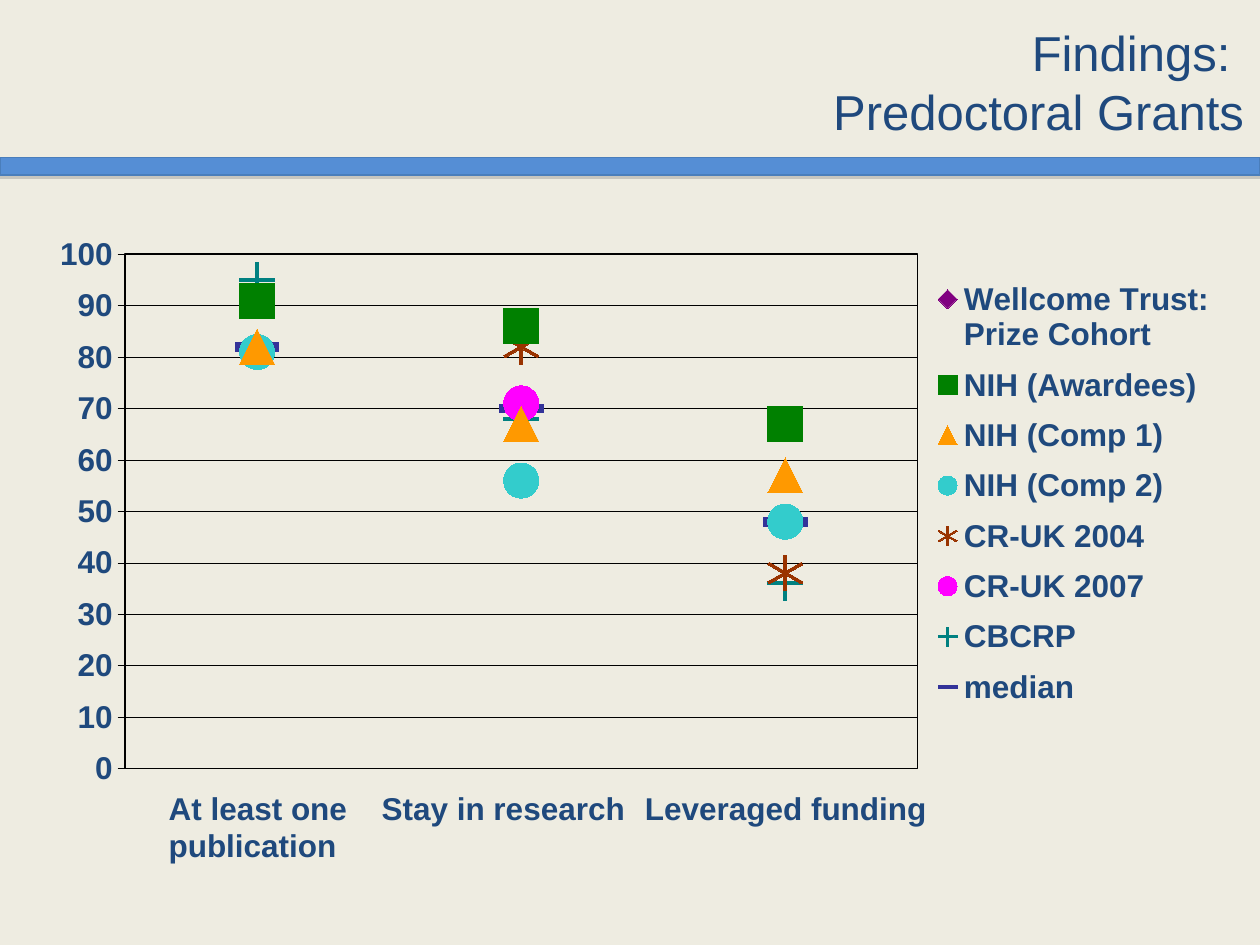
from dataclasses import dataclass
from typing import NamedTuple, Optional

from lxml import etree
from pptx import Presentation
from pptx.chart.data import XyChartData
from pptx.dml.color import RGBColor as Rgb
from pptx.enum.chart import XL_CHART_TYPE as Kind
from pptx.enum.chart import XL_LEGEND_POSITION as Side
from pptx.enum.chart import XL_MARKER_STYLE as Mark
from pptx.enum.chart import XL_TICK_LABEL_POSITION as Spot
from pptx.enum.chart import XL_TICK_MARK as Tick
from pptx.enum.shapes import MSO_SHAPE as Form
from pptx.enum.text import MSO_ANCHOR as Anchor
from pptx.enum.text import PP_ALIGN as Align
from pptx.oxml import parse_xml
from pptx.oxml.ns import nsdecls, qn
from pptx.util import Inches, Pt


@dataclass(frozen=True)
class Theme:
    font: str = "Arial"
    back: str = "EEECE1"
    ink: str = "1F497D"
    bar: str = "558ED5"
    edge: str = "4A7EBB"
    rule: str = "000000"
    title: int = 28
    body: int = 18
    thin: float = 0.25


class Group(NamedTuple):
    name: str
    vals: tuple[Optional[int], ...]
    color: str
    mark: Mark
    size: int = 20


class Label(NamedTuple):
    text: str
    left: float
    top: float
    width: float
    height: float
    size: int
    bold: bool = True
    wrap: bool = False
    align: Align = Align.LEFT
    anchor: Anchor = Anchor.TOP


LOOK = Theme()

GROUPS = [
    Group("Wellcome Trust: Prize Cohort", (82, None, None), "800080", Mark.DIAMOND),
    Group("NIH (Awardees)", (91, 86, 67), "008000", Mark.SQUARE),
    Group("NIH (Comp 1)", (82, 67, 57), "FF9900", Mark.TRIANGLE),
    Group("NIH (Comp 2)", (81, 56, 48), "33CCCC", Mark.CIRCLE),
    Group("CR-UK 2004", (None, 82, 38), "993300", Mark.STAR),
    Group("CR-UK 2007", (None, 71, None), "FF00FF", Mark.CIRCLE),
    Group("CBCRP", (95, 68, 36), "008080", Mark.PLUS),
    Group("median", (82, 70, 48), "333399", Mark.DASH, 25),
]

LABELS = [
    Label("At least one\npublication", 1.24, 6.21, 1.63, 0.71, LOOK.body),
    Label("Stay in research", 2.93, 6.21, 2.15, 0.4, LOOK.body),
    Label("Leveraged funding", 5.02, 6.21, 2.46, 0.4, LOOK.body),
    Label("Findings: \vPredoctoral Grants", 5.49, 0.02, 4.48, 1.25, LOOK.title,
          False, True, Align.RIGHT, Anchor.MIDDLE),
]


def rgb(code: str) -> Rgb:
    return Rgb.from_string(code)


def style(font, size: int, bold: bool) -> None:
    font.name, font.size, font.bold = LOOK.font, Pt(size), bold
    font.color.rgb = rgb(LOOK.ink)


def stroke(line, color: str, width: float) -> None:
    line.color.rgb = rgb(color)
    line.width = Pt(width)


def add_bar(slide) -> None:
    bar = slide.shapes.add_shape(
        Form.RECTANGLE, 0, Inches(1.25), Inches(10), Inches(0.14))
    bar.fill.solid()
    bar.fill.fore_color.rgb = rgb(LOOK.bar)
    stroke(bar.line, LOOK.edge, 0.75)
    bar.shadow.inherit = False
    glow = bar.element.spPr.find(qn("a:effectLst"))
    drop = etree.SubElement(glow, qn("a:outerShdw"), blurRad="0",
                            dist=str(Pt(1.8)), dir="5400000", rotWithShape="0")
    tint = etree.SubElement(drop, qn("a:srgbClr"), val="808080")
    etree.SubElement(tint, qn("a:alpha"), val="35000")


def add_label(slide, item: Label) -> None:
    box = slide.shapes.add_textbox(*map(Inches, item[1:5]))
    frame = box.text_frame
    frame.word_wrap = item.wrap
    frame.vertical_anchor = item.anchor
    frame.text = item.text
    for para in frame.paragraphs:
        para.alignment = item.align
        for run in para.runs:
            style(run.font, item.size, item.bold)


def layout(x: float, y: float, w: float, h: float, inner: bool = False):
    target = '<c:layoutTarget val="inner"/>' if inner else ""
    return parse_xml(
        f'<c:layout {nsdecls("c")}><c:manualLayout>{target}'
        '<c:xMode val="edge"/><c:yMode val="edge"/>'
        f'<c:x val="{x}"/><c:y val="{y}"/><c:w val="{w}"/><c:h val="{h}"/>'
        '</c:manualLayout></c:layout>')


def set_axes(chart) -> None:
    across, up = chart.category_axis, chart.value_axis
    across.minimum_scale, across.maximum_scale = 0.5, 3.5
    across.major_unit = 1
    across.tick_label_position = Spot.NONE
    across.major_tick_mark = Tick.NONE
    across.has_major_gridlines = False
    up.minimum_scale, up.maximum_scale, up.major_unit = 0, 100, 10
    up.major_tick_mark = Tick.OUTSIDE
    up.has_major_gridlines = True
    up.tick_labels.number_format = "0"
    up.tick_labels.number_format_is_linked = False
    for axis in (across, up):
        axis.minor_tick_mark = Tick.NONE
        stroke(axis.format.line, LOOK.rule, LOOK.thin)
    stroke(up.major_gridlines.format.line, LOOK.rule, LOOK.thin)


def set_frame(chart) -> None:
    # Plot area: fixed place and black outline
    area = chart.element.find(".//" + qn("c:plotArea"))
    for old in area.findall(qn("c:layout")):
        area.remove(old)
    area.insert(0, layout(0.08, 0.08, 0.66, 0.84, True))
    area.append(parse_xml(
        f'<c:spPr {nsdecls("c", "a")}><a:noFill/><a:ln w="{Pt(1)}"><a:solidFill>'
        f'<a:srgbClr val="{LOOK.rule}"/></a:solidFill></a:ln></c:spPr>'))

    # Legend
    chart.has_legend = True
    key = chart.legend
    key.position = Side.RIGHT
    key.include_in_layout = False
    root = chart.element.find(".//" + qn("c:legend"))
    for old in root.findall(qn("c:layout")):
        root.remove(old)
    root.find(qn("c:legendPos")).addnext(layout(0.75, 0.1, 0.24, 0.74))


def add_plot(slide) -> None:
    data = XyChartData()
    for group in GROUPS:
        row = data.add_series(group.name)
        for x, val in enumerate(group.vals, 1):
            if val is not None:
                row.add_data_point(x, val)
    chart = slide.shapes.add_chart(
        Kind.XY_SCATTER, Inches(0.23), Inches(1.63), Inches(9.53),
        Inches(4.86), data).chart
    chart.has_title = False
    style(chart.font, LOOK.body, True)
    plot = chart.plots[0]
    plot.vary_by_categories = False
    for group, row in zip(GROUPS, plot.series):
        row.format.line.fill.background()
        mark = row.marker
        mark.style, mark.size = group.mark, group.size
        mark.format.fill.solid()
        mark.format.fill.fore_color.rgb = rgb(group.color)
        stroke(mark.format.line, group.color, 0.75)
    set_axes(chart)
    set_frame(chart)


def main() -> None:
    deck = Presentation()
    deck.slide_width, deck.slide_height = Inches(10), Inches(7.5)
    slide = deck.slides.add_slide(deck.slide_layouts[6])
    slide.background.fill.solid()
    slide.background.fill.fore_color.rgb = rgb(LOOK.back)
    add_bar(slide)
    add_plot(slide)
    for item in LABELS:
        add_label(slide, item)
    deck.save("out.pptx")


if __name__ == "__main__":
    main()
